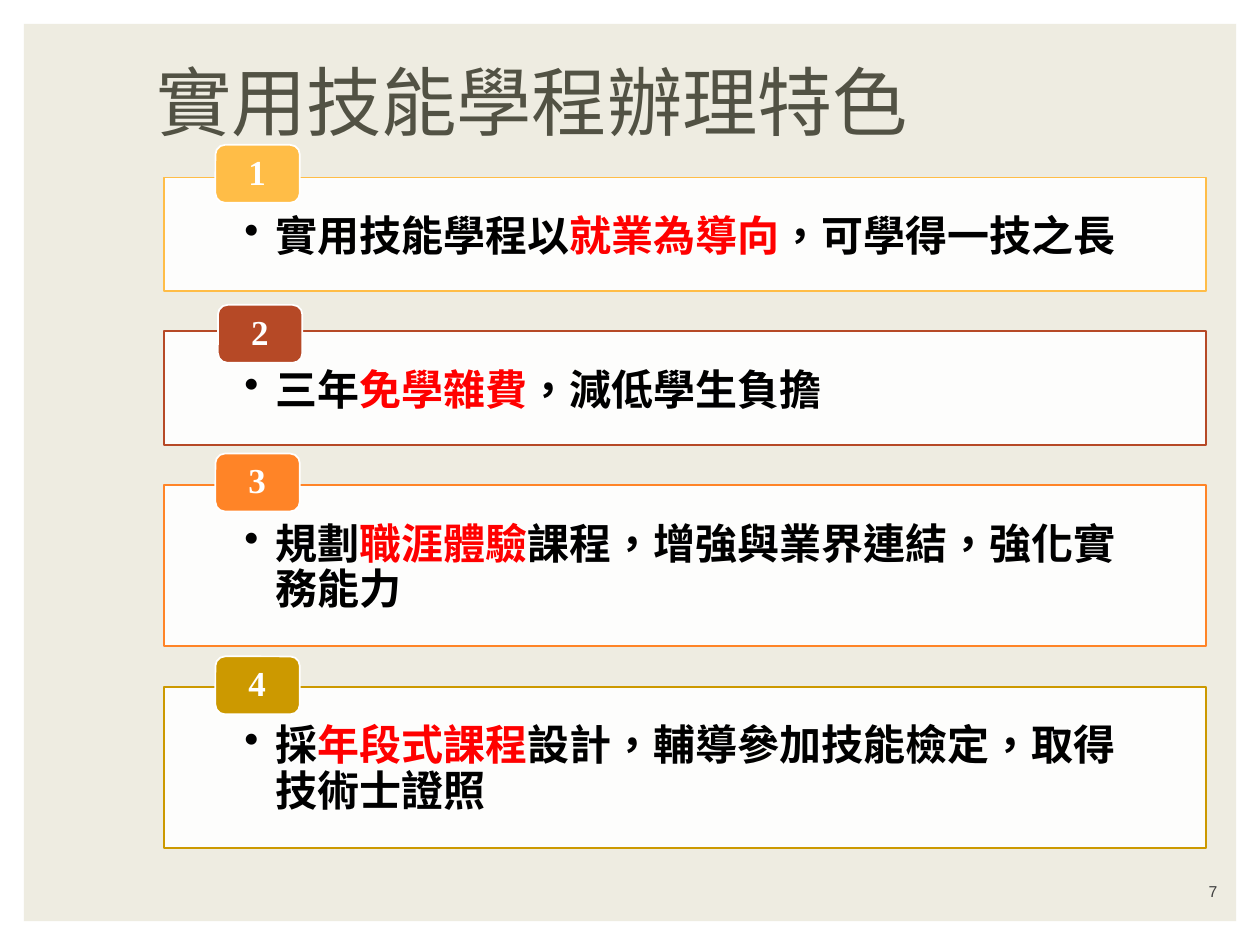
from lxml import etree
from pptx import Presentation
from pptx.dml.color import RGBColor
from pptx.enum.shapes import MSO_SHAPE
from pptx.enum.text import MSO_ANCHOR, PP_ALIGN
from pptx.oxml.ns import qn
from pptx.util import Inches, Pt

RECT, ROUND = MSO_SHAPE.RECTANGLE, MSO_SHAPE.ROUNDED_RECTANGLE
TOP, MID, LOW = MSO_ANCHOR.TOP, MSO_ANCHOR.MIDDLE, MSO_ANCHOR.BOTTOM
LEFT, RIGHT = PP_ALIGN.LEFT, PP_ALIGN.RIGHT


class Theme:
    """Colours, fonts and type sizes of the slide."""
    paper, white, ink, red = "EEECE1", "FFFFFF", "000000", "FF0000"
    title, grey = "525244", "404040"
    hues = ["FFBD47", "B64926", "FF8427", "CC9900"]
    serif, sans, han = "Times New Roman", "Arial", "Noto Sans CJK SC"
    head, body, num, foot = 43, 24, 20, 9


def write(frame, runs, size, font, bold=False, align=LEFT, anchor=TOP,
          inset=(0.1, 0.05, 0.1, 0.05), space=1, bullet=False, glow=False):
    """Fill a text frame with one paragraph of (text, colour) runs."""
    frame.word_wrap = True
    frame.vertical_anchor = anchor
    (frame.margin_left, frame.margin_top,
     frame.margin_right, frame.margin_bottom) = map(Inches, inset)
    para = frame.paragraphs[0]
    para.alignment, para.line_spacing = align, space
    if bullet:
        para.level = 1
        props = para._p.get_or_add_pPr()
        props.set("marL", str(Inches(0.25)))
        props.set("indent", str(-Inches(0.25)))
        etree.SubElement(props, qn("a:buChar"), char="•")
    for text, hue in runs:
        run = para.add_run()
        run.text = text
        run.font.size, run.font.bold, run.font.name = Pt(size), bold, font
        run.font.color.rgb = RGBColor.from_string(hue)
        props = run._r.get_or_add_rPr()
        props.set("lang", "zh-TW")
        etree.SubElement(props, qn("a:ea"), typeface=Theme.han)
        if glow:
            effect = etree.Element(qn("a:effectLst"))
            cast = etree.SubElement(effect, qn("a:outerShdw"),
                                    dist=str(Pt(2)), dir="2700000")
            etree.SubElement(cast, qn("a:srgbClr"), val=Theme.white)
            props.find(qn("a:solidFill")).addnext(effect)


class Deck:
    """Hold the theme and the current slide."""

    def __init__(self, theme):
        """Open a deck with one blank slide."""
        self.theme = theme
        self.show = Presentation()
        self.show.slide_width, self.show.slide_height = Inches(10), Inches(7.5)
        self.slide = self.show.slides.add_slide(self.show.slide_layouts[6])

    def shape(self, kind, box, fill, line=None, alpha=None):
        """Add a preset shape with a flat fill."""
        item = self.slide.shapes.add_shape(kind, *map(Inches, box))
        item.shadow.inherit = False
        item.fill.solid()
        item.fill.fore_color.rgb = RGBColor.from_string(fill)
        if alpha:
            tint = item.fill._xPr.find(qn("a:solidFill"))[0]
            etree.SubElement(tint, qn("a:alpha"), val=str(alpha * 1000))
        if line:
            item.line.color.rgb = RGBColor.from_string(line)
            item.line.width = Pt(1)
        else:
            item.line.fill.background()
        return item

    def label(self, box, text, hue, **style):
        """Add a text box."""
        item = self.slide.shapes.add_textbox(*map(Inches, box))
        write(item.text_frame, [(text, hue)], **style)

    def card(self, top, high, hue, parts):
        """Add a bordered card with its middle words in red."""
        look = self.theme
        item = self.shape(RECT, (1.3, top, 8.27, high), look.white, hue, 90)
        runs = zip(parts, (look.ink, look.red, look.ink))
        write(item.text_frame, runs, look.body, look.serif, bold=True,
              inset=(0.64, 0.3, 0.64, 0.19), space=0.9, bullet=True)

    def badge(self, left, top, hue, text):
        """Add a numbered badge."""
        look = self.theme
        item = self.shape(ROUND, (left, top, 0.67, 0.46), hue, look.white)
        write(item.text_frame, [(text, look.white)], look.num, look.serif,
              bold=True, anchor=MID, inset=(0.24, 0, 0.2, 0), space=0.9)


def main():
    """Build the slide."""
    look = Theme()
    deck = Deck(look)
    deck.shape(RECT, (0.19, 0.19, 9.62, 7.12), look.paper)
    deck.label((8.56, 6.9, 1.2, 0.3), "7", look.grey, size=look.foot,
               font=look.sans, align=RIGHT, anchor=LOW)
    rows = [
        (0.9, 1.71, 1.15, ("實用技能學程以", "就業為導向", "，可學得一技之長")),
        (0.9, 1.73, 2.42, ("三年", "免學雜費", "，減低學生負擔")),
        (1.28, 1.71, 3.6, ("規劃", "職涯體驗",
                           "課程，增強與業界連結，強化實務能力")),
        (1.28, 1.71, 5.21, ("採", "年段式課程",
                            "設計，輔導參加技能檢定，取得技術士證照")),
    ]
    top, gap = 1.41, 0.32
    for num, (hue, row) in enumerate(zip(look.hues, rows), 1):
        high, left, peak, parts = row
        deck.card(top, high, hue, parts)
        deck.badge(left, peak, hue, str(num))
        top += high + gap
    deck.label((1.14, 0.29, 8.27, 1.01), "實用技能學程辦理特色", look.title,
               size=look.head, font=look.han, anchor=MID, glow=True)
    deck.show.save("out.pptx")


if __name__ == "__main__":
    main()
